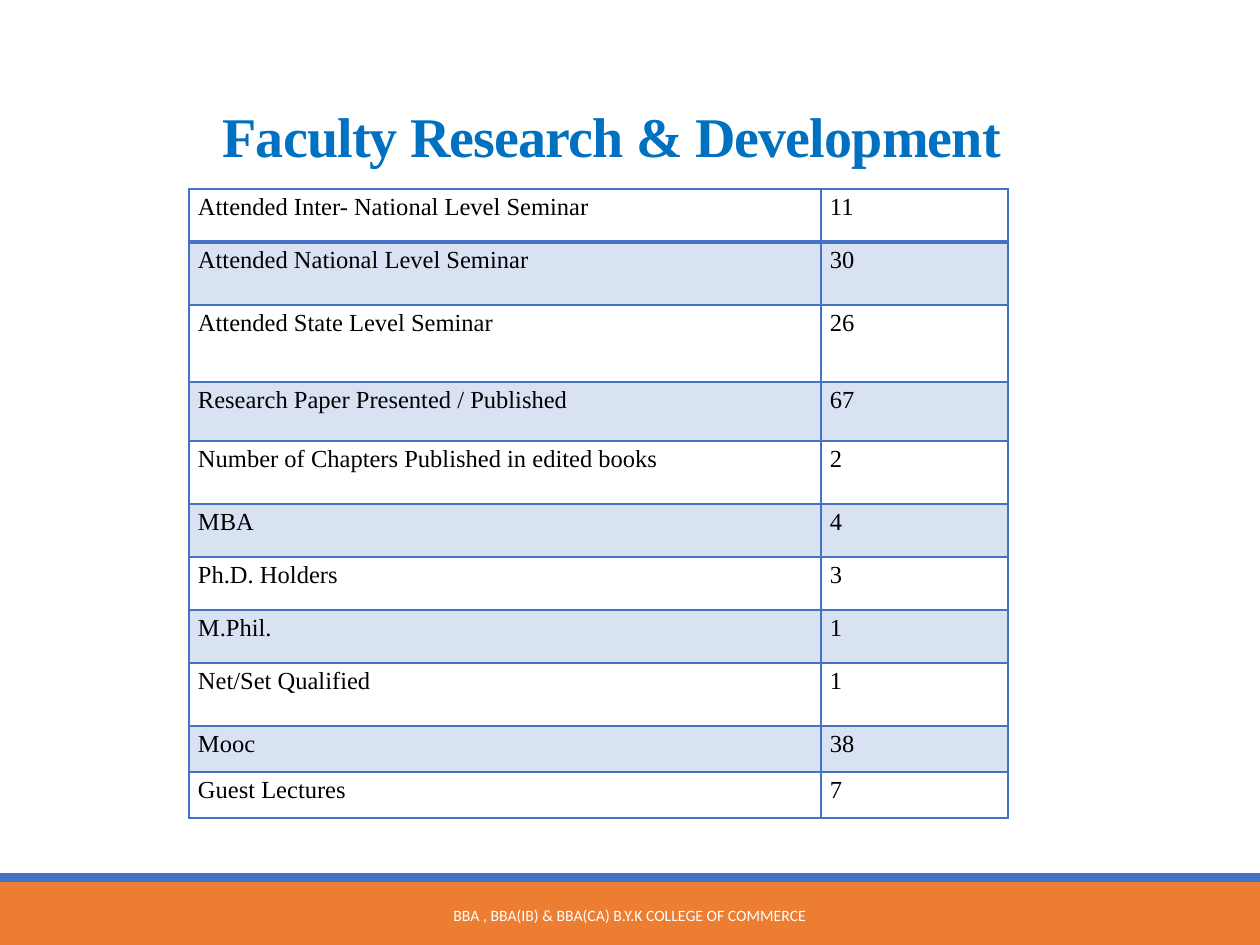
import pptx
import pptx.dml.color
import pptx.enum.shapes
import pptx.enum.text
import pptx.oxml
import pptx.oxml.ns
import pptx.util

RGB = pptx.dml.color.RGBColor
ALIGN = pptx.enum.text.PP_ALIGN
ANCHOR = pptx.enum.text.MSO_ANCHOR

# Content: activity, count, row height in px
TITLE = "Faculty Research & Development"
FOOTER = "BBA , BBA(IB) & BBA(CA) B.Y.K COLLEGE OF COMMERCE"
ACTIVITIES = [
    ("Attended Inter- National Level Seminar", "11", 53),
    ("Attended National Level Seminar", "30", 63),
    ("Attended State Level Seminar", "26", 77),
    ("Research Paper Presented / Published", "67", 59),
    ("Number of Chapters Published in edited books", "2", 63),
    ("MBA", "4", 53),
    ("Ph.D. Holders", "3", 53),
    ("M.Phil.", "1", 53),
    ("Net/Set Qualified", "1", 63),
    ("Mooc", "38", 46),
    ("Guest Lectures", "7", 46),
]
COLUMN_WIDTHS = (632, 187)

# Format
SLIDE_W, SLIDE_H = 1260, 945
BLUE = RGB(0x44, 0x72, 0xC4)
ORANGE = RGB(0xED, 0x7D, 0x31)
TITLE_BLUE = RGB(0x00, 0x70, 0xC0)
WHITE = RGB(0xFF, 0xFF, 0xFF)
BLACK = RGB(0x00, 0x00, 0x00)
SERIF, SANS = "Times New Roman", "Calibri"


def px(length):
    return pptx.util.Emu(round(length * 914400 / 126))


def box(left, top, width, height):
    return px(left), px(top), px(width), px(height)


def write(frame, text, size, color, font=SERIF, bold=False, align=ALIGN.LEFT,
          anchor=None, line_spacing=None, tracking=None):
    frame.word_wrap = True
    if anchor is not None:
        frame.vertical_anchor = anchor
    paragraph = frame.paragraphs[0]
    paragraph.alignment = align
    if line_spacing:
        paragraph.line_spacing = line_spacing
    run = paragraph.add_run()
    run.text = text
    run.font.name = font
    run.font.size = pptx.util.Pt(size)
    run.font.bold = bold
    run.font.color.rgb = color
    if tracking:
        run.font._element.set("spc", str(round(tracking * 100)))


def add_band(slide, top, height, color):
    band = slide.shapes.add_shape(
        pptx.enum.shapes.MSO_SHAPE.RECTANGLE, *box(0, top, SLIDE_W, height))
    band.shadow.inherit = False
    band.fill.solid()
    band.fill.fore_color.rgb = color
    band.line.fill.background()


def cell_xml(cell, xml):
    namespace = pptx.oxml.ns.nsdecls("a")
    element = pptx.oxml.parse_xml(xml.replace(" ", f" {namespace} ", 1))
    cell._tc.get_or_add_tcPr().append(element)


def format_cell(cell, row):
    cell.margin_left = cell.margin_right = px(9)
    cell.margin_top = cell.margin_bottom = px(5)
    # The line under the first row is twice as thick
    thick_side = {0: "B", 1: "T"}.get(row)
    for side in "LRTB":
        width = pptx.util.Pt(2 if side == thick_side else 1)
        cell_xml(cell, f'<a:ln{side} w="{width}"><a:solidFill>'
                       f'<a:srgbClr val="{BLUE}"/></a:solidFill></a:ln{side}>')
    # Every second row is tinted
    if row % 2:
        cell_xml(cell, f'<a:solidFill ><a:srgbClr val="{BLUE}">'
                       '<a:alpha val="20000"/></a:srgbClr></a:solidFill>')
    else:
        cell.fill.background()


def main():
    deck = pptx.Presentation()
    deck.slide_width, deck.slide_height = px(SLIDE_W), px(SLIDE_H)
    slide = deck.slides.add_slide(deck.slide_layouts[5])

    # Footer bands and text
    add_band(slide, 882, 63, ORANGE)
    add_band(slide, 873, 9, BLUE)
    footer = slide.shapes.add_textbox(*box(380, 890, 499, 50))
    write(footer.text_frame, FOOTER, 9, WHITE, font=SANS,
          align=ALIGN.CENTER, anchor=ANCHOR.MIDDLE)

    # Title
    title = slide.shapes.title
    title.left, title.top, title.width, title.height = box(210, 105, 851, 70)
    write(title.text_frame, TITLE, 32, TITLE_BLUE, bold=True,
          anchor=ANCHOR.BOTTOM, line_spacing=0.85, tracking=-0.5)

    # Activity table
    table_height = sum(height for _, _, height in ACTIVITIES)
    table = slide.shapes.add_table(
        len(ACTIVITIES), len(COLUMN_WIDTHS),
        *box(189, 189, sum(COLUMN_WIDTHS), table_height)).table
    table.first_row = table.horz_banding = False
    for column, width in zip(table.columns, COLUMN_WIDTHS):
        column.width = px(width)
    for row, (activity, count, height) in enumerate(ACTIVITIES):
        table.rows[row].height = px(height)
        for column, text in enumerate((activity, count)):
            cell = table.cell(row, column)
            format_cell(cell, row)
            write(cell.text_frame, text, 14, BLACK)

    deck.save("out.pptx")


if __name__ == "__main__":
    main()
